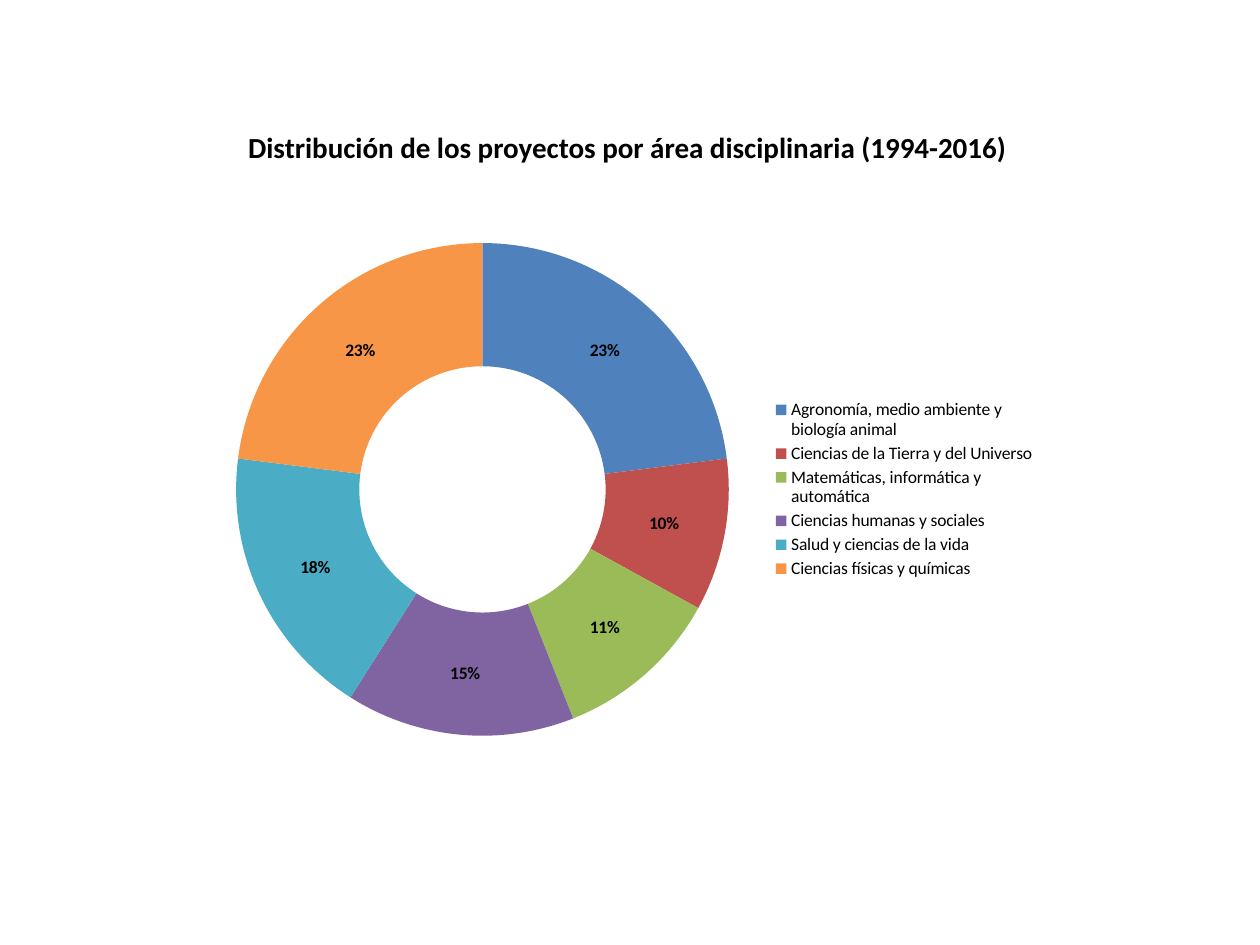
import dataclasses
import lxml.etree
import pptx
import pptx.chart.data
import pptx.dml.color
import pptx.enum.chart
import pptx.enum.text
import pptx.oxml.ns
import pptx.util

SCALE = 914400 / 126
FONT = "Calibri"
BLACK = "000000"


@dataclasses.dataclass(frozen=True)
class Area:
    name: str
    share: float
    color: str


@dataclasses.dataclass(frozen=True)
class Box:
    left: int
    top: int
    width: int
    height: int

    def emu(self) -> list[int]:
        return [px(n) for n in dataclasses.astuple(self)]


AREAS = [
    Area("Agronomía, medio ambiente y biología animal", 0.23, "4F81BD"),
    Area("Ciencias de la Tierra y del Universo", 0.10, "C0504D"),
    Area("Matemáticas, informática y automática", 0.11, "9BBB59"),
    Area("Ciencias humanas y sociales", 0.15, "8064A2"),
    Area("Salud y ciencias de la vida", 0.18, "4BACC6"),
    Area("Ciencias físicas y químicas", 0.23, "F79646"),
]
CHART = Box(198, 226, 848, 528)
RING = Box(236, 243, 493, 493)
KEY = Box(768, 396, 272, 187)
TITLE = Box(179, 123, 896, 48)


def px(n: int) -> int:
    return round(n * SCALE)


def paint(color: str) -> pptx.dml.color.RGBColor:
    return pptx.dml.color.RGBColor.from_string(color)


def style(font, size: float, bold: bool = False, color: str = BLACK) -> None:
    font.name = FONT
    font.size = pptx.util.Pt(size)
    font.bold = bold
    font.color.rgb = paint(color)


def write(slide, text: str, box: Box, *, size: float, bold: bool = False,
          align=pptx.enum.text.PP_ALIGN.CENTER) -> None:
    frame = slide.shapes.add_textbox(*box.emu()).text_frame
    frame.word_wrap = True
    frame.auto_size = pptx.enum.text.MSO_AUTO_SIZE.SHAPE_TO_FIT_TEXT
    line = frame.paragraphs[0]
    line.alignment = align
    run = line.add_run()
    run.text = text
    style(run.font, size, bold)


def place(parent, box: Box, index: int, inner: bool = False) -> None:
    qn = pptx.oxml.ns.qn
    for old in parent.findall(qn("c:layout")):
        parent.remove(old)
    layout = lxml.etree.Element(qn("c:layout"))
    manual = lxml.etree.SubElement(layout, qn("c:manualLayout"))
    parts = {"layoutTarget": "inner"} if inner else {}
    parts |= {
        "xMode": "edge",
        "yMode": "edge",
        "x": round((box.left - CHART.left) / CHART.width, 3),
        "y": round((box.top - CHART.top) / CHART.height, 3),
        "w": round(box.width / CHART.width, 3),
        "h": round(box.height / CHART.height, 3),
    }
    for tag, value in parts.items():
        lxml.etree.SubElement(manual, qn(f"c:{tag}")).set("val", str(value))
    parent.insert(index, layout)


def draw(slide, areas: list[Area]) -> None:
    data = pptx.chart.data.CategoryChartData(number_format="0%")
    data.categories = [area.name for area in areas]
    data.add_series("Series 1", [area.share for area in areas])
    kind = pptx.enum.chart.XL_CHART_TYPE.DOUGHNUT
    chart = slide.shapes.add_chart(kind, *CHART.emu(), data).chart
    style(chart.font, 10)
    chart.has_title = False
    chart.has_legend = True
    chart.legend.position = pptx.enum.chart.XL_LEGEND_POSITION.RIGHT
    chart.legend.include_in_layout = False
    style(chart.legend.font, 10)

    plot = chart.plots[0]
    plot.vary_by_categories = True
    ring = plot.series[0]
    for i, area in enumerate(areas):
        fill = ring.points[i].format.fill
        fill.solid()
        fill.fore_color.rgb = paint(area.color)
    labels = ring.data_labels
    labels.show_value = True
    labels.show_percentage = False
    labels.number_format = "0%"
    labels.number_format_is_linked = False
    style(labels.font, 10, bold=True)

    root = chart.element
    place(root.find(".//" + pptx.oxml.ns.qn("c:plotArea")), RING, 0, inner=True)
    place(root.find(".//" + pptx.oxml.ns.qn("c:legend")), KEY, 1)


def main() -> None:
    deck = pptx.Presentation()
    deck.slide_width, deck.slide_height = px(1260), px(945)
    slide = deck.slides.add_slide(deck.slide_layouts[6])
    draw(slide, AREAS)
    write(slide, "Distribución de los proyectos por área disciplinaria (1994-2016)",
          TITLE, size=16.6, bold=True)
    deck.save("out.pptx")


if __name__ == "__main__":
    main()
